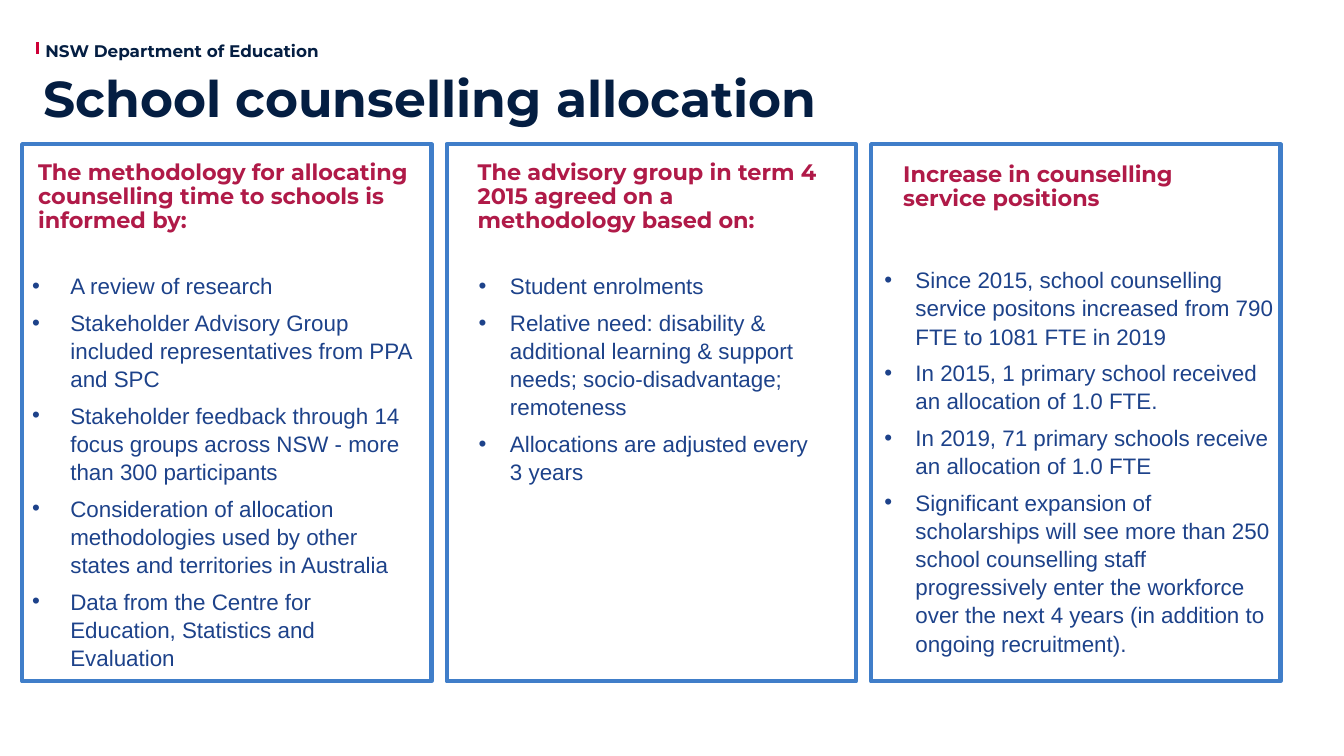
from lxml.etree import SubElement
from pptx import Presentation
from pptx.dml.color import RGBColor
from pptx.enum.shapes import MSO_CONNECTOR as Conn, MSO_SHAPE as Shape
from pptx.enum.text import MSO_ANCHOR as Anchor, MSO_AUTO_SIZE as Fit, PP_ALIGN as Align
from pptx.oxml.ns import qn
from pptx.util import Inches, Pt

NAVY = RGBColor(0x04, 0x1E, 0x42)
BLUE = RGBColor(0x1D, 0x42, 0x8A)
SKY = RGBColor(0x40, 0x7E, 0xC9)
RED = RGBColor(0xCE, 0x00, 0x37)
CRIMSON = RGBColor(0xB0, 0x1A, 0x48)

HEAD_FONT, BODY_FONT = "Montserrat", "Arial"
LEFT, TOP, WIDTH, HEIGHT, STEP = 0.22, 1.43, 4.06, 5.33, 4.21

# heading, heading box, list box, list insets, list indent, items
COLUMNS = [
    ("The methodology for allocating counselling time to schools is informed by:",
     (0.28, 1.44, 4.29, 1.04), (0.22, 2.64, 3.97, 4.2), (0.1, 0.05), 0.38,
     ["A review of research",
      "Stakeholder Advisory Group included representatives from PPA and SPC",
      "Stakeholder feedback through 14 focus groups across NSW - more than 300 participants",
      "Consideration of allocation methodologies used by other states and territories in Australia",
      "Data from the Centre for Education, Statistics and Evaluation"]),
    ("The advisory group in term 4 2015 agreed on a methodology based on:",
     (4.64, 1.44, 3.64, 1.04), (4.65, 2.64, 3.63, 2.05), (0.1, 0.05), 0.31,
     ["Student enrolments",
      "Relative need: disability & additional learning & support needs; "
      "socio-disadvantage; remoteness",
      "Allocations are adjusted every 3 years"]),
    ("Increase in counselling service positions",
     (8.86, 1.34, 3.71, 1.04), (8.77, 2.63, 3.88, 3.75), (0, 0), 0.31,
     ["Since 2015, school counselling service positons increased from 790 FTE to 1081 FTE in 2019",
      "In 2015, 1 primary school received an allocation of 1.0 FTE.",
      "In 2019, 71 primary schools receive an allocation of 1.0 FTE",
      "Significant expansion of scholarships will see more than 250 school counselling staff "
      "progressively enter the workforce over the next 4 years (in addition to ongoing "
      "recruitment)."]),
]


def set_font(para, name, size, color, bold=False):
    font = para.font
    font.name, font.size, font.bold = name, Pt(size), bold
    font.color.rgb = color


def set_frame(frame, inset=(0, 0), anchor=Anchor.TOP):
    frame.word_wrap = True
    frame.auto_size = Fit.NONE
    frame.vertical_anchor = anchor
    frame.margin_left = frame.margin_right = Inches(inset[0])
    frame.margin_top = frame.margin_bottom = Inches(inset[1])


def add_box(slide, box, inset=(0, 0), anchor=Anchor.TOP):
    frame = slide.shapes.add_textbox(*map(Inches, box)).text_frame
    set_frame(frame, inset, anchor)
    return frame


def add_title(slide, text):
    title = slide.shapes.title
    title.left, title.top, title.width, title.height = map(Inches, (0.43, 0.73, 12.48, 0.55))
    set_frame(title.text_frame, anchor=Anchor.MIDDLE)
    para = title.text_frame.paragraphs[0]
    para.text = text
    para.alignment = Align.LEFT
    para.line_spacing = 0.9
    set_font(para, HEAD_FONT, 36, NAVY, True)


def add_tag(slide, text):
    """Department name with the short red bar before it."""
    bar = slide.shapes.add_connector(
        Conn.STRAIGHT, *map(Inches, (0.37, 0.42, 0.37, 0.54)))
    bar.line.color.rgb = RED
    bar.line.width = Pt(2.5)
    SubElement(bar.element.spPr, qn("a:effectLst"))
    frame = add_box(slide, (0.45, 0.4, 2.74, 0.2))
    frame.word_wrap = False
    para = frame.paragraphs[0]
    para.text = text
    set_font(para, HEAD_FONT, 12, NAVY, True)


def add_panel(slide, left):
    panel = slide.shapes.add_shape(
        Shape.RECTANGLE, *map(Inches, (left, TOP, WIDTH, HEIGHT)))
    panel.shadow.inherit = False
    panel.fill.background()
    panel.line.color.rgb = SKY
    panel.line.width = Pt(3)


def add_heading(slide, text, box):
    para = add_box(slide, box, (0.1, 0.05), Anchor.MIDDLE).paragraphs[0]
    para.text = text
    para.line_spacing = 0.9
    set_font(para, HEAD_FONT, 16, CRIMSON, True)


def add_list(slide, items, box, inset, indent):
    frame = add_box(slide, box, inset)
    for i, item in enumerate(items):
        para = frame.add_paragraph() if i else frame.paragraphs[0]
        para.text = item
        para.line_spacing = 1.05
        para.space_after = Pt(6)
        props = para._p.get_or_add_pPr()
        props.set("marL", str(Inches(indent)))
        props.set("indent", str(-Inches(indent)))
        SubElement(props, qn("a:buFont"), typeface=BODY_FONT)
        SubElement(props, qn("a:buChar"), char="•")
        set_font(para, BODY_FONT, 16, BLUE)


def main():
    deck = Presentation()
    deck.slide_width, deck.slide_height = Inches(13.33), Inches(7.5)
    slide = deck.slides.add_slide(deck.slide_layouts[5])
    add_tag(slide, "NSW Department of Education")
    add_title(slide, "School counselling allocation")
    for i, (head, head_box, list_box, inset, indent, items) in enumerate(COLUMNS):
        add_panel(slide, LEFT + i * STEP)
        add_heading(slide, head, head_box)
        add_list(slide, items, list_box, inset, indent)
    deck.save("out.pptx")


if __name__ == "__main__":
    main()
